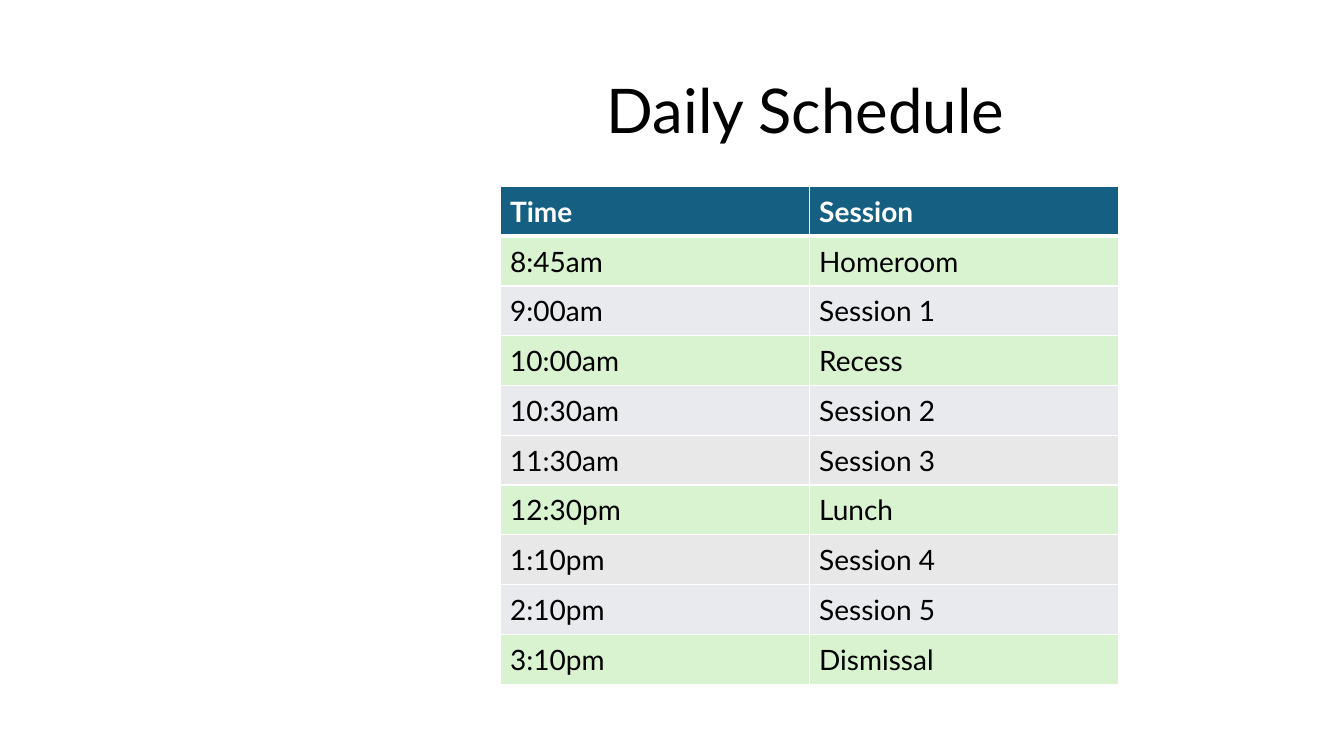
from lxml import etree
from pptx import Presentation
from pptx.dml.color import RGBColor
from pptx.enum import text
from pptx.oxml import ns
from pptx.util import Inches, Pt

COLORS = {
    "white": "FFFFFF",
    "black": "000000",
    "head": "156082",
    "break": "D9F2D0",
    "cool": "E8EAED",
    "warm": "E8E8E8",
}

ROWS = [
    ("Time", "Session", "head"),
    ("8:45am", "Homeroom", "break"),
    ("9:00am", "Session 1", "cool"),
    ("10:00am", "Recess", "break"),
    ("10:30am", "Session 2", "cool"),
    ("11:30am", "Session 3", "warm"),
    ("12:30pm", "Lunch", "break"),
    ("1:10pm", "Session 4", "warm"),
    ("2:10pm", "Session 5", "cool"),
    ("3:10pm", "Dismissal", "break"),
]


def write(frame, words, size=20, color="black", bold=False,
          align=text.PP_ALIGN.LEFT, spacing=None):
    para = frame.paragraphs[0]
    para.alignment = align
    para.line_spacing = spacing
    run = para.add_run()
    run.text = words
    run.font.name = "Lato"
    run.font.size = Pt(size)
    run.font.bold = bold
    run.font.color.rgb = RGBColor.from_string(COLORS[color])


def edge(cell, side, width):
    """Draw a white border on one side (L, R, T or B) of a cell."""
    props = cell._tc.get_or_add_tcPr()
    line = etree.SubElement(props, ns.qn(f"a:ln{side}"), w=str(Pt(width)))
    fill = etree.SubElement(line, ns.qn("a:solidFill"))
    etree.SubElement(fill, ns.qn("a:srgbClr"), val=COLORS["white"])


prs = Presentation()
prs.slide_width = Inches(13.33)
prs.slide_height = Inches(7.5)
slide = prs.slides.add_slide(prs.slide_layouts[6])

title = slide.shapes.add_textbox(
    Inches(2.64), Inches(0.4), Inches(10.7), Inches(1.45)).text_frame
title.word_wrap = True
title.vertical_anchor = text.MSO_ANCHOR.MIDDLE
write(title, "Daily Schedule", size=44, align=text.PP_ALIGN.CENTER, spacing=0.9)

table = slide.shapes.add_table(
    len(ROWS), 2, Inches(4.96), Inches(1.85), Inches(6.13), Inches(4.94)).table

for row, (time, name, tint) in enumerate(ROWS):
    head = row == 0
    for col, words in enumerate((time, name)):
        cell = table.cell(row, col)
        cell.vertical_anchor = text.MSO_ANCHOR.MIDDLE
        edge(cell, "L", 1)
        edge(cell, "R", 1)
        edge(cell, "T", 3 if row == 1 else 1)
        edge(cell, "B", 3 if head else 1)
        cell.fill.solid()
        cell.fill.fore_color.rgb = RGBColor.from_string(COLORS[tint])
        write(cell.text_frame, words, color="white" if head else "black", bold=head)

prs.save("out.pptx")
